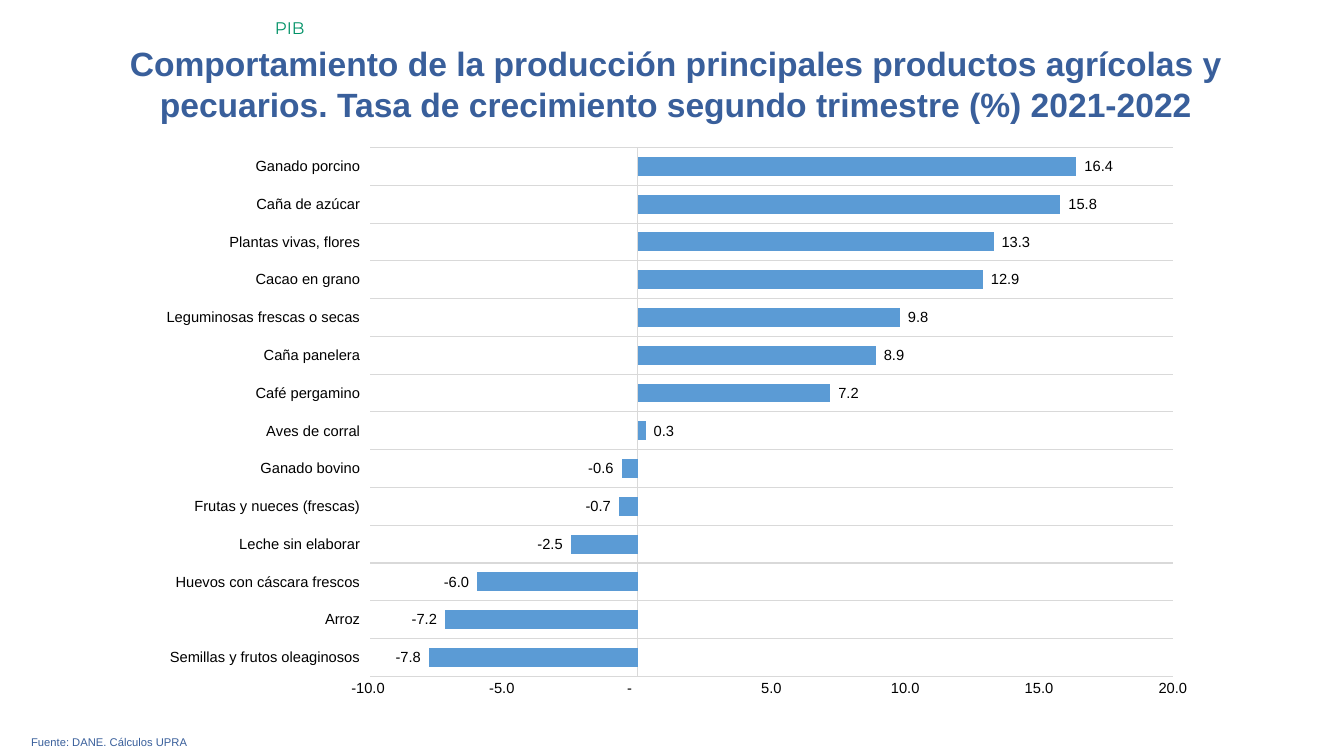
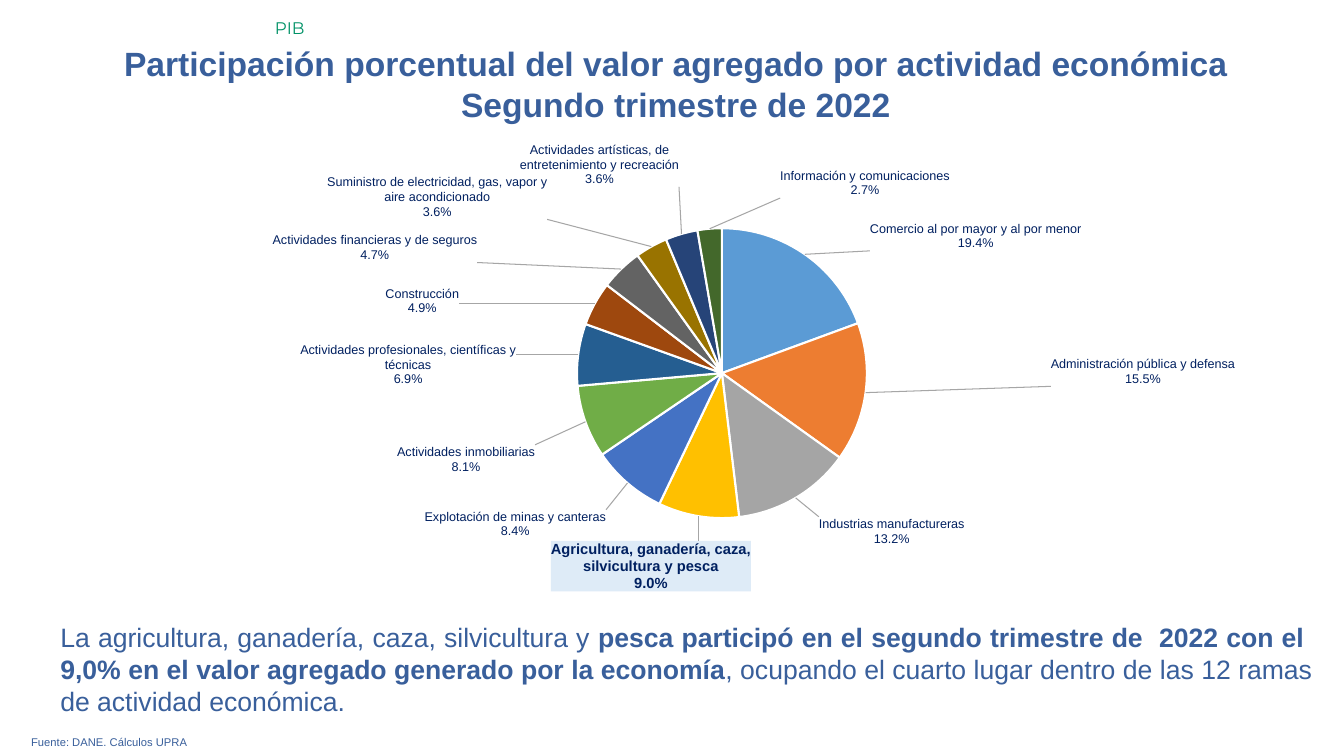
from math import cos, pi, sin

from lxml import etree
from pptx import Presentation
from pptx.chart.data import CategoryChartData
from pptx.dml.color import RGBColor
from pptx.enum import chart as ch, text as tx
from pptx.util import Pt

NAVY, GREEN, LABEL, BLACK, RULE = "395F9B", "009267", "002060", "000000", "D9D9D9"
FACE = "Arial"
ALIGN = tx.PP_ALIGN
NUMBER = '_-* #,##0.0_-;\\-* #,##0.0_-;_-* "-"??_-;_-@_-'
NS_C = "http://schemas.openxmlformats.org/drawingml/2006/chart"
NS_A = "http://schemas.openxmlformats.org/drawingml/2006/main"

TITLE_BOX = (32.4, 27.36, 900.72, 65.52)
SOURCE_BOX = (15.12, 522, 929.52, 17.28)
TOPIC_BOX = (189.36, 9.36, 770.4, 21.6)
BAR_BOX = (103.68, 97.2, 762.48, 408.96)
PIE_BOX = (88.56, 95.04, 800.64, 338.4)
MESSAGE_BOX = (0, 439.92, 944.64, 76.32)

PRODUCTION = [
    ("Semillas y frutos oleaginosos", -7.8),
    ("Arroz", -7.2),
    ("Huevos con cáscara frescos", -6),
    ("Leche sin elaborar", -2.5),
    ("Frutas y nueces (frescas)", -0.7),
    ("Ganado bovino", -0.6),
    ("Aves de corral", 0.3),
    ("Café pergamino", 7.2),
    ("Caña panelera", 8.9),
    ("Leguminosas frescas o secas", 9.8),
    ("Cacao en grano", 12.9),
    ("Plantas vivas, flores", 13.3),
    ("Caña de azúcar", 15.8),
    ("Ganado porcino", 16.4),
]

ACTIVITIES = [
    ("Comercio al por mayor y al por menor", 19.4, "5B9BD5", (532.9, 84.2)),
    ("Administración pública y defensa", 15.5, "ED7D31", (662.1, 160)),
    ("Industrias manufactureras", 13.2, "A5A5A5", (496.4, 274.2)),
    ("Agricultura, ganadería, caza, silvicultura y pesca", 9, "FFC000", (447.9, 291.4)),
    ("Explotación de minas y canteras", 8.4, "4472C4", (344.3, 269.2)),
    ("Actividades inmobiliarias", 8.1, "70AD47", (293.6, 222.8)),
    ("Actividades profesionales, científicas y técnicas", 6.9, "255E91", (280, 181.4)),
    ("Construcción", 4.9, "9E480E", (239.3, 130.7)),
    ("Actividades financieras y de seguros", 4.7, "636363", (252.2, 92.5)),
    ("Suministro de electricidad, gas, vapor y aire acondicionado", 3.6, "997300", (302.2, 61.7)),
    ("Actividades artísticas, de entretenimiento y recreación", 3.6, "264478", (396.4, 38.5)),
    ("Información y comunicaciones", 2.7, "43682B", (529.3, 46.4)),
]
HIGHLIGHT = 3
PLOT = (0.184, 0.201, 0.699, 0.612)
LABEL_GAP = 4.25

MESSAGE = [
    ("La agricultura, ganadería, caza, silvicultura y ", False),
    ("pesca participó en el segundo trimestre de  2022 con el  9,0% "
     "en el valor agregado generado por la economía", True),
    (", ocupando el cuarto lugar dentro de las 12 ramas de actividad económica.", False),
]


def rgb(value):
    """Turn a hex string into a colour."""
    return RGBColor.from_string(value)


def style(font, size, color, face=FACE, bold=None):
    """Format a font."""
    font.size, font.name, font.bold = Pt(size), face, bold
    font.color.rgb = rgb(color)


def text_box(slide, box, runs, size, color, align, face=FACE):
    """Place a one-paragraph text box and return its paragraph."""
    frame = slide.shapes.add_textbox(*map(Pt, box)).text_frame
    frame.word_wrap = True
    paragraph = frame.paragraphs[0]
    paragraph.alignment = align
    style(paragraph.font, size, color, face)
    for words, bold in runs:
        run = paragraph.add_run()
        run.text = words
        style(run.font, size, color, face, bold)
    return paragraph


def base_slide(deck, heading):
    """Add a slide with its title, topic and source line."""
    slide = deck.slides.add_slide(deck.slide_layouts[5])
    title = slide.shapes.title
    title.left, title.top, title.width, title.height = map(Pt, TITLE_BOX)
    frame = title.text_frame
    frame.text = heading
    frame.auto_size = tx.MSO_AUTO_SIZE.NONE
    frame.vertical_anchor = tx.MSO_ANCHOR.TOP
    for paragraph in frame.paragraphs:
        paragraph.alignment = ALIGN.CENTER
        style(paragraph.font, 24, NAVY, bold=True)
    text_box(slide, SOURCE_BOX, [("Fuente: DANE. Cálculos UPRA", False)], 8, NAVY, ALIGN.JUSTIFY)
    text_box(slide, TOPIC_BOX, [("PIB", False)], 12, GREEN, ALIGN.LEFT, "Montserrat")
    return slide


def add_chart(slide, box, kind, names, values, size, color):
    """Add a one-series chart without title or legend."""
    data = CategoryChartData()
    data.categories = names
    data.add_series("Series 1", values)
    chart = slide.shapes.add_chart(kind, *map(Pt, box), data).chart
    chart.has_title = chart.has_legend = False
    style(chart.font, size, color)
    return chart


def growth_chart(slide, box):
    """Draw the bars of growth by product."""
    names, values = zip(*PRODUCTION)
    chart = add_chart(slide, box, ch.XL_CHART_TYPE.BAR_CLUSTERED, names, values, 10.5, BLACK)
    products, rates = chart.category_axis, chart.value_axis
    for axis in (products, rates):
        axis.major_tick_mark = axis.minor_tick_mark = ch.XL_TICK_MARK.NONE
        style(axis.tick_labels.font, 10.5, BLACK)
    products.tick_label_position = ch.XL_TICK_LABEL_POSITION.LOW
    products.has_major_gridlines = True
    for line in (products.format.line, products.major_gridlines.format.line):
        line.color.rgb = rgb(RULE)
        line.width = Pt(0.75)
    rates.has_major_gridlines = False
    rates.format.line.fill.background()
    rates.minimum_scale, rates.maximum_scale, rates.major_unit = -10, 20, 5
    plot = chart.plots[0]
    plot.gap_width, plot.vary_by_categories = 100, False
    bars = plot.series[0]
    bars.invert_if_negative = False
    bars.format.fill.solid()
    bars.format.fill.fore_color.rgb = rgb("5B9BD5")
    labels = bars.data_labels
    labels.show_value = True
    labels.position = ch.XL_LABEL_POSITION.OUTSIDE_END
    style(labels.font, 10.5, BLACK)
    for part in (rates.tick_labels, labels):
        part.number_format, part.number_format_is_linked = NUMBER, False


def layout_xml(inner="", **places):
    """Return a manual layout element."""
    items = "".join(f'<c:{key} val="{value}"/>' for key, value in places.items())
    return f"<c:layout><c:manualLayout>{inner}{items}</c:manualLayout></c:layout>"


def label_xml(size, bold, fill):
    """Return the shared format of a pie label."""
    paint = f'<a:solidFill><a:srgbClr val="{fill}"/></a:solidFill>' if fill else "<a:noFill/>"
    shows = "".join(
        f'<c:show{key} val="{int(key in ("CatName", "Percent"))}"/>'
        for key in ("LegendKey", "Val", "CatName", "SerName", "Percent", "BubbleSize"))
    return (
        '<c:numFmt formatCode="0.0%" sourceLinked="0"/>'
        f"<c:spPr>{paint}<a:ln><a:noFill/></a:ln></c:spPr>"
        f'<c:txPr><a:bodyPr/><a:p><a:pPr><a:defRPr sz="{int(size * 100)}" b="{bold}">'
        f'<a:solidFill><a:srgbClr val="{LABEL}"/></a:solidFill><a:latin typeface="{FACE}"/>'
        '</a:defRPr></a:pPr><a:endParaRPr lang="es-CO"/></a:p></c:txPr>'
        f'<c:dLblPos val="bestFit"/>{shows}<c:separator>\n</c:separator>')


def label_shifts(box):
    """Yield each label's shift from the pie's rim, as shares of the chart."""
    width, height = box[2:]
    x, y, w, h = PLOT
    center_x, center_y = (x + w / 2) * width, (y + h / 2) * height
    reach = min(w * width, h * height) / 2 + LABEL_GAP
    total = sum(activity[1] for activity in ACTIVITIES)
    passed = 0
    for _, value, _, (left, top) in ACTIVITIES:
        angle = 2 * pi * (passed + value / 2) / total
        passed += value
        yield ((left - center_x - reach * sin(angle)) / width,
               (top - center_y + reach * cos(angle)) / height)


def share_chart(slide, box):
    """Draw the pie of value added by activity."""
    names, values, colors, _ = zip(*ACTIVITIES)
    chart = add_chart(slide, box, ch.XL_CHART_TYPE.PIE, names, values, 9, LABEL)
    plot = chart.plots[0]
    plot.vary_by_categories = True
    pie = plot.series[0]
    for index, color in enumerate(colors):
        look = pie.points[index].format
        look.fill.solid()
        look.fill.fore_color.rgb = rgb(color)
        look.line.color.rgb = rgb("FFFFFF")
        look.line.width = Pt(1.5)
    regular, strong = label_xml(9, 0, None), label_xml(10.5, 1, "DEEBF7")
    labels = "".join(
        f'<c:dLbl><c:idx val="{index}"/>{layout_xml(x=round(dx, 4), y=round(dy, 4))}'
        f"{strong if index == HIGHLIGHT else regular}</c:dLbl>"
        for index, (dx, dy) in enumerate(label_shifts(box)))
    block = etree.fromstring(
        f'<c:dLbls xmlns:c="{NS_C}" xmlns:a="{NS_A}">{labels}{regular}'
        '<c:showLeaderLines val="1"/><c:leaderLines><c:spPr><a:ln w="9525"><a:solidFill>'
        '<a:srgbClr val="A6A6A6"/></a:solidFill></a:ln></c:spPr></c:leaderLines></c:dLbls>')
    series = pie._element
    series.find(f"{{{NS_C}}}cat").addprevious(block)
    area = series.getparent().getparent()
    for old in area.findall(f"{{{NS_C}}}layout"):
        area.remove(old)
    x, y, w, h = PLOT
    modes = '<c:layoutTarget val="inner"/><c:xMode val="edge"/><c:yMode val="edge"/>'
    holder = etree.fromstring(
        f'<c:plotArea xmlns:c="{NS_C}">{layout_xml(modes, x=x, y=y, w=w, h=h)}</c:plotArea>')
    area.insert(0, holder[0])


def message(slide, box):
    """Write the indented conclusion under the pie."""
    paragraph = text_box(slide, box, MESSAGE, 19, NAVY, ALIGN.JUSTIFY)
    paragraph.level = 1
    properties = paragraph._p.get_or_add_pPr()
    properties.set("marL", str(Pt(36)))
    properties.set("indent", "0")


def main():
    """Build both slides and save them."""
    deck = Presentation()
    deck.slide_width, deck.slide_height = Pt(960), Pt(540)
    growth = base_slide(
        deck, "Comportamiento de la producción principales productos agrícolas y pecuarios. "
        "Tasa de crecimiento segundo trimestre (%) 2021-2022")
    growth_chart(growth, BAR_BOX)
    share = base_slide(
        deck, "Participación porcentual del valor agregado por actividad económica\n"
        "Segundo trimestre de 2022")
    share_chart(share, PIE_BOX)
    message(share, MESSAGE_BOX)
    deck.save("out.pptx")


if __name__ == "__main__":
    main()
